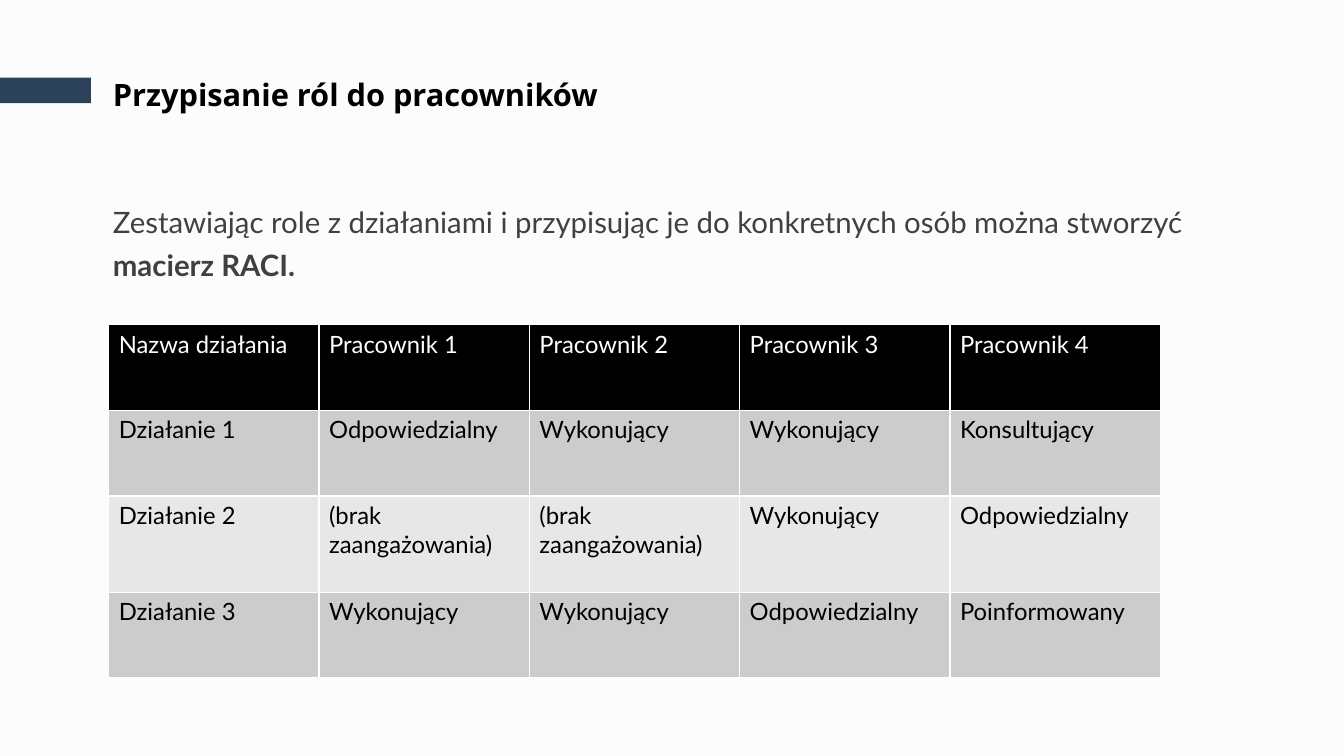
from pptx import Presentation
from pptx.dml.color import RGBColor
from pptx.enum.shapes import MSO_SHAPE
from pptx.enum.text import MSO_ANCHOR, MSO_AUTO_SIZE, PP_ALIGN
from pptx.oxml import parse_xml
from pptx.oxml.ns import nsdecls
from pptx.util import Cm, Pt

ROLES = [
    ["Nazwa działania", "Pracownik 1", "Pracownik 2", "Pracownik 3", "Pracownik 4"],
    ["Działanie 1", "Odpowiedzialny", "Wykonujący", "Wykonujący", "Konsultujący"],
    ["Działanie 2", "(brak zaangażowania)", "(brak zaangażowania)", "Wykonujący",
     "Odpowiedzialny"],
    ["Działanie 3", "Wykonujący", "Wykonujący", "Odpowiedzialny", "Poinformowany"],
]
ROW_HEIGHTS = [2.16, 2.16, 2.42, 2.16]
ROW_FILLS = ["000000", "CCCCCC", "E7E7E7", "CCCCCC"]
COLUMN_WIDTH = 5.3


def paint(fill, color):
    fill.solid()
    fill.fore_color.rgb = RGBColor.from_string(color)


def set_font(p, name, size, color, bold=None):
    p.font.name = name
    p.font.size = Pt(size)
    p.font.bold = bold
    p.font.color.rgb = RGBColor.from_string(color)


def place(sp, left, top, width, height):
    """Position a placeholder and return its first paragraph, top left."""
    sp.left, sp.top, sp.width, sp.height = Cm(left), Cm(top), Cm(width), Cm(height)
    tf = sp.text_frame
    tf.word_wrap = True
    tf.auto_size = MSO_AUTO_SIZE.NONE
    tf.vertical_anchor = MSO_ANCHOR.TOP
    p = tf.paragraphs[0]
    p.alignment = PP_ALIGN.LEFT
    return p


def add_accent_bar(s):
    sp = s.shapes.add_shape(MSO_SHAPE.RECTANGLE, 0, Cm(1.96), Cm(2.29), Cm(0.64))
    sp.shadow.inherit = False
    paint(sp.fill, "2C415A")
    sp.line.fill.background()


def add_title(s):
    p = place(s.shapes.title, 2.59, 1.65, 29.34, 1.9)
    p.text = "Przypisanie ról do pracowników"
    p.line_spacing = 1.14
    set_font(p, "Open Sans", 22, "000000", True)


def add_intro(s):
    p = place(s.placeholders[1], 2.59, 4.85, 29.34, 12.14)
    p.add_run().text = ("Zestawiając role z działaniami i przypisując je "
                        "do konkretnych osób można stworzyć ")
    r = p.add_run()
    r.text = "macierz RACI."
    r.font.bold = True
    p.line_spacing = 1.2
    p.space_before = Pt(18)
    set_font(p, "Lato", 21, "404040")
    pPr = p._p.get_or_add_pPr()
    pPr.set("marL", "0")
    pPr.set("indent", "0")
    pPr.insert_element_before(parse_xml(f"<a:buNone {nsdecls('a')}/>"),
                              "a:tabLst", "a:defRPr", "a:extLst")


def set_borders(cell, color, width):
    tcPr = cell._tc.get_or_add_tcPr()
    for i, side in enumerate(("lnL", "lnR", "lnT", "lnB")):
        tcPr.insert(i, parse_xml(
            f'<a:{side} {nsdecls("a")} w="{Pt(width)}"><a:solidFill>'
            f'<a:srgbClr val="{color}"/></a:solidFill></a:{side}>'))


def add_roles_table(s):
    columns = len(ROLES[0])
    table = s.shapes.add_table(len(ROLES), columns, Cm(2.74), Cm(8.18),
                               Cm(COLUMN_WIDTH * columns), Cm(sum(ROW_HEIGHTS))).table
    for column in table.columns:
        column.width = Cm(COLUMN_WIDTH)
    for i, (row, texts) in enumerate(zip(table.rows, ROLES)):
        row.height = Cm(ROW_HEIGHTS[i])
        for cell, text in zip(row.cells, texts):
            cell.text = text
            paint(cell.fill, ROW_FILLS[i])
            set_borders(cell, "FFFFFF", 1)
            set_font(cell.text_frame.paragraphs[0], "Lato", 17,
                     "000000" if i else "FFFFFF", False)


def main():
    prs = Presentation()
    prs.slide_width, prs.slide_height = Cm(33.87), Cm(19.05)
    s = prs.slides.add_slide(prs.slide_layouts[1])
    paint(s.background.fill, "FCFCFC")
    add_accent_bar(s)
    add_title(s)
    add_intro(s)
    add_roles_table(s)
    prs.save("out.pptx")


if __name__ == "__main__":
    main()
